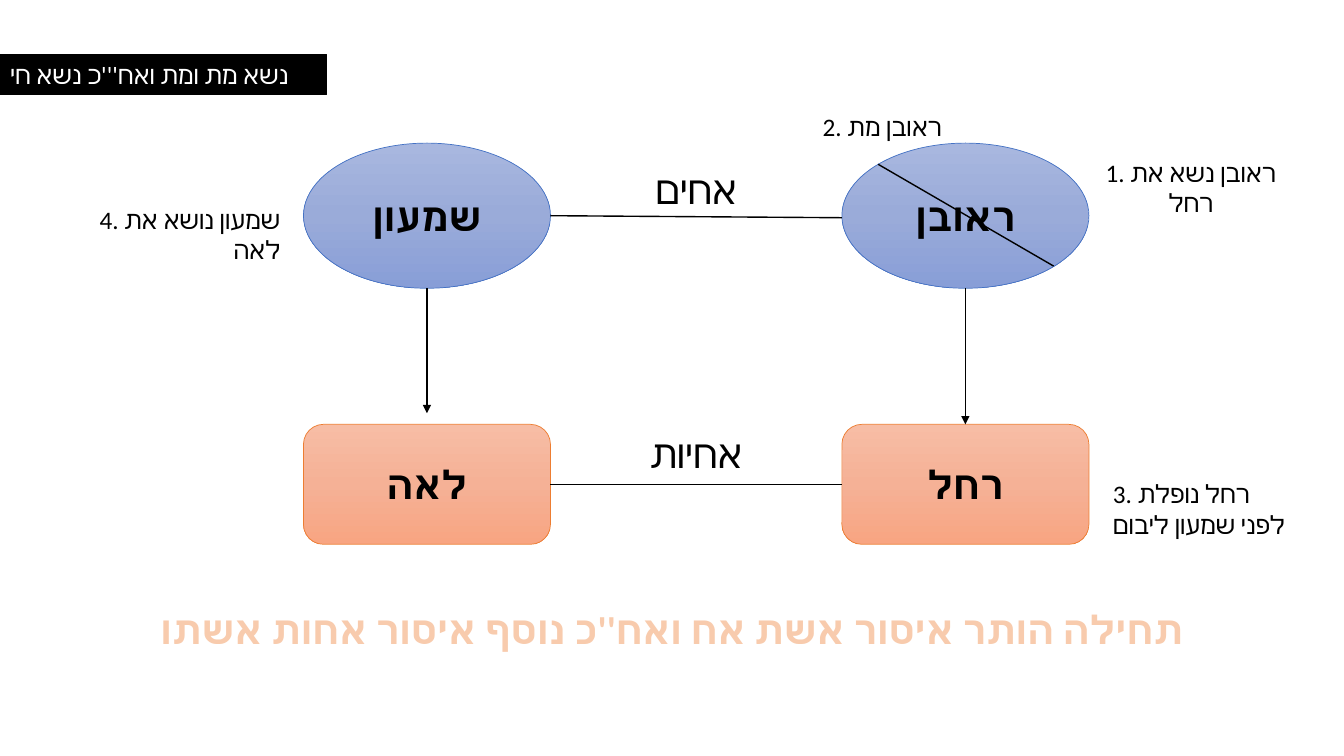
from lxml.etree import SubElement
from pptx import Presentation
from pptx.dml.color import RGBColor
from pptx.enum.shapes import MSO_CONNECTOR, MSO_SHAPE
from pptx.enum.text import MSO_ANCHOR, MSO_AUTO_SIZE, PP_ALIGN
from pptx.oxml.ns import qn
from pptx.util import Inches, Pt

FONT = "Calibri"
COLORS = {"black": "000000", "white": "FFFFFF", "blue": "4472C4",
          "orange": "ED7D31", "peach": "F8CBAD"}
BROTHER_GRADIENT = ["A8B7DF", "9AABD9", "889ED7"]
SISTER_GRADIENT = ["F7BDA5", "F5B196", "F8A582"]

# Content
TITLE = "נשא מת ומת ואח'''כ נשא חי"
CONCLUSION = "תחילה הותר איסור אשת אח ואח''כ נוסף איסור אחות אשתו"
COUPLES = [("שמעון", "לאה"), ("ראובן", "רחל")]  # left to right
RELATIONS = [("אחים", 1.59), ("אחיות", 4.21)]  # text, top
STEPS = [  # text, left, top, width, height, alignment
    ("1. ראובן נשא את רחל", 10.65, 1.51, 2.32, 0.71, PP_ALIGN.CENTER),
    ("2. ראובן מת", 7.68, 1.06, 1.76, 0.4, PP_ALIGN.RIGHT),
    ("3. רחל נופלת לפני שמעון ליבום", 10.94, 4.7, 2.03, 0.71, PP_ALIGN.LEFT),
    ("4. שמעון נושא את לאה", 0.7, 1.98, 2.18, 0.71, PP_ALIGN.RIGHT),
]

# Layout
SLIDE_WIDTH, SLIDE_HEIGHT = 13.33, 7.5
COLUMN_LEFTS = [3.01, 8.35]
NODE_WIDTH = 2.45
BROTHER_TOP, BROTHER_HEIGHT = 1.42, 1.44
SISTER_TOP, SISTER_HEIGHT = 4.21, 1.19
GAP_LEFT = COLUMN_LEFTS[0] + NODE_WIDTH
GAP_WIDTH = COLUMN_LEFTS[1] - GAP_LEFT

presentation = Presentation()
presentation.slide_width = Inches(SLIDE_WIDTH)
presentation.slide_height = Inches(SLIDE_HEIGHT)
slide = presentation.slides.add_slide(presentation.slide_layouts[5])
shapes = slide.shapes


def rgb(name):
    return RGBColor.from_string(COLORS[name])


def write(shape, text, size, color="black", bold=False,
          align=PP_ALIGN.CENTER, anchor=MSO_ANCHOR.TOP):
    frame = shape.text_frame
    frame.text = text
    frame.word_wrap = True
    frame.auto_size = MSO_AUTO_SIZE.NONE
    frame.vertical_anchor = anchor
    paragraph = frame.paragraphs[0]
    paragraph.alignment = align
    run = paragraph.runs[0]
    run.font.name = FONT
    run.font.size = Pt(size)
    run.font.bold = bold
    run.font.color.rgb = rgb(color)
    # Hebrew takes the complex-script font
    SubElement(run.font._element, qn("a:cs"), typeface=FONT)
    return run


def add_label(text, left, top, width, height, size, **style):
    box = shapes.add_textbox(*map(Inches, (left, top, width, height)))
    return write(box, text, size, **style)


def add_node(kind, text, left, top, height, gradient, outline):
    node = shapes.add_shape(kind, *map(Inches, (left, top, NODE_WIDTH, height)))
    node.shadow.inherit = False
    node.fill.gradient()
    node.fill.gradient_angle = 270
    stops = node._element.spPr.find(qn("a:gradFill")).find(qn("a:gsLst"))
    stops.clear()
    for index, color in enumerate(gradient):
        stop = SubElement(stops, qn("a:gs"), pos=str(index * 50000))
        SubElement(stop, qn("a:srgbClr"), val=color)
    node.line.color.rgb = rgb(outline)
    node.line.width = Pt(0.5)
    write(node, text, 28, bold=True, anchor=MSO_ANCHOR.MIDDLE)
    return node


def add_line(x1, y1, x2, y2, arrow=False):
    line = shapes.add_connector(MSO_CONNECTOR.STRAIGHT, *map(Inches, (x1, y1, x2, y2)))
    line.line.color.rgb = rgb("black")
    line.line.width = Pt(1)
    if arrow:
        SubElement(line.line._get_or_add_ln(), qn("a:tailEnd"), type="triangle")
    SubElement(line._element.spPr, qn("a:effectLst"))
    return line


# Title strip
title = shapes.title
title.left, title.top, title.width, title.height = map(Inches, (0, 0.54, 3.24, 0.4))
title.fill.solid()
title.fill.fore_color.rgb = rgb("black")
title.line.color.rgb = rgb("black")
title.line.width = Pt(1)
write(title, TITLE, 18, color="white", align=PP_ALIGN.LEFT)

# Brothers above, sisters below
sisters = []
for (brother, sister), left in zip(COUPLES, COLUMN_LEFTS):
    add_node(MSO_SHAPE.OVAL, brother, left, BROTHER_TOP, BROTHER_HEIGHT,
             BROTHER_GRADIENT, "blue")
    sisters.append(add_node(MSO_SHAPE.ROUNDED_RECTANGLE, sister, left, SISTER_TOP,
                            SISTER_HEIGHT, SISTER_GRADIENT, "orange"))
leah, rachel = sisters

# Family ties
for text, top in RELATIONS:
    add_label(text, GAP_LEFT, top, GAP_WIDTH, 0.57, 28)
add_line(GAP_LEFT, 2.14, COLUMN_LEFTS[1], 2.16)
sisters_line = add_line(GAP_LEFT, 4.8, COLUMN_LEFTS[1], 4.8)
sisters_line.begin_connect(leah, 3)
sisters_line.end_connect(rachel, 1)

# Marriage arrows
arrow_top = BROTHER_TOP + BROTHER_HEIGHT
shimon_x, reuven_x = [left + NODE_WIDTH / 2 for left in COLUMN_LEFTS]
add_line(shimon_x, arrow_top, shimon_x, 4.1, arrow=True)
marriage = add_line(reuven_x, arrow_top, reuven_x, SISTER_TOP, arrow=True)
marriage.end_connect(rachel, 0)

# Strike through the dead brother
add_line(8.71, 1.63, 10.45, 2.64)

# Numbered steps
for text, left, top, width, height, align in STEPS:
    add_label(text, left, top, width, height, 18, align=align)

# Conclusion with outlined letters
run = add_label(CONCLUSION, 0, 5.96, SLIDE_WIDTH, 0.57, 28, color="peach", bold=True)
properties = run.font._element
outline = SubElement(properties, qn("a:ln"), w=str(Pt(1.75)))
fill = SubElement(outline, qn("a:solidFill"))
SubElement(fill, qn("a:srgbClr"), val=COLORS["orange"])
properties.insert(0, outline)

presentation.save("out.pptx")
